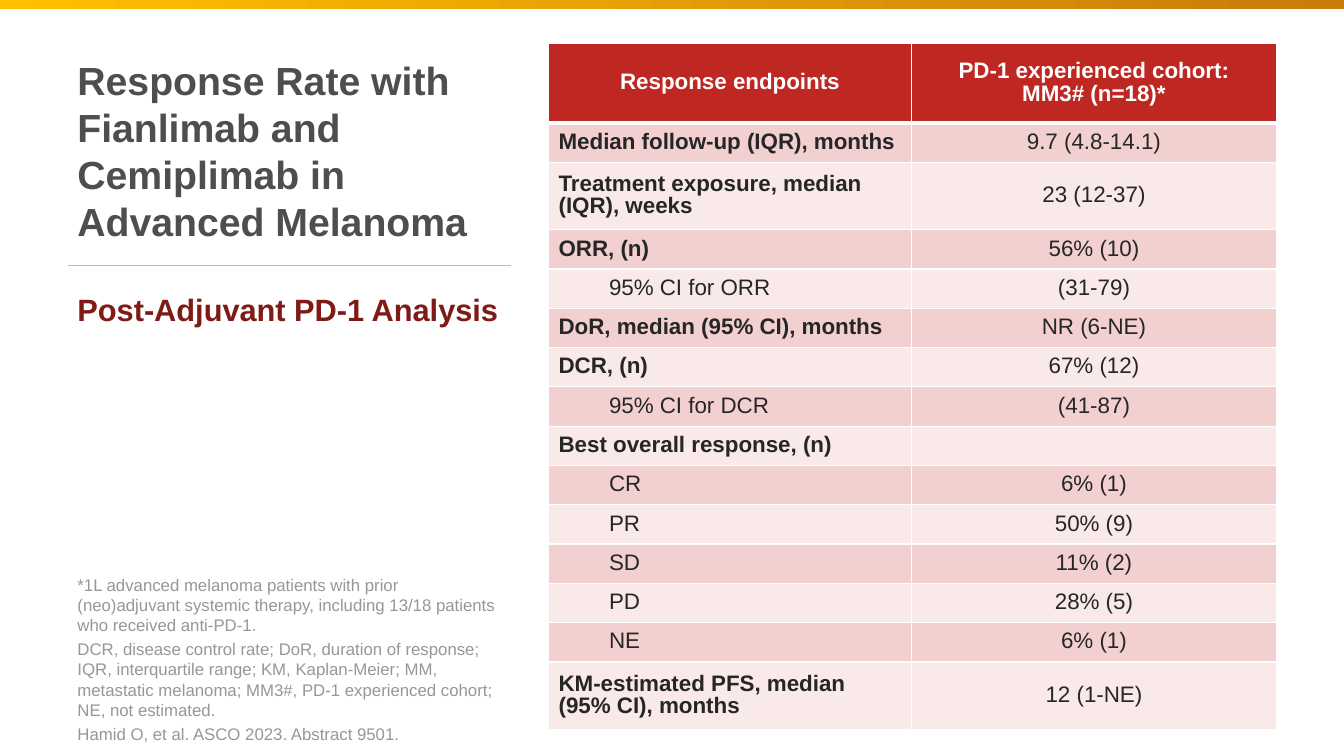
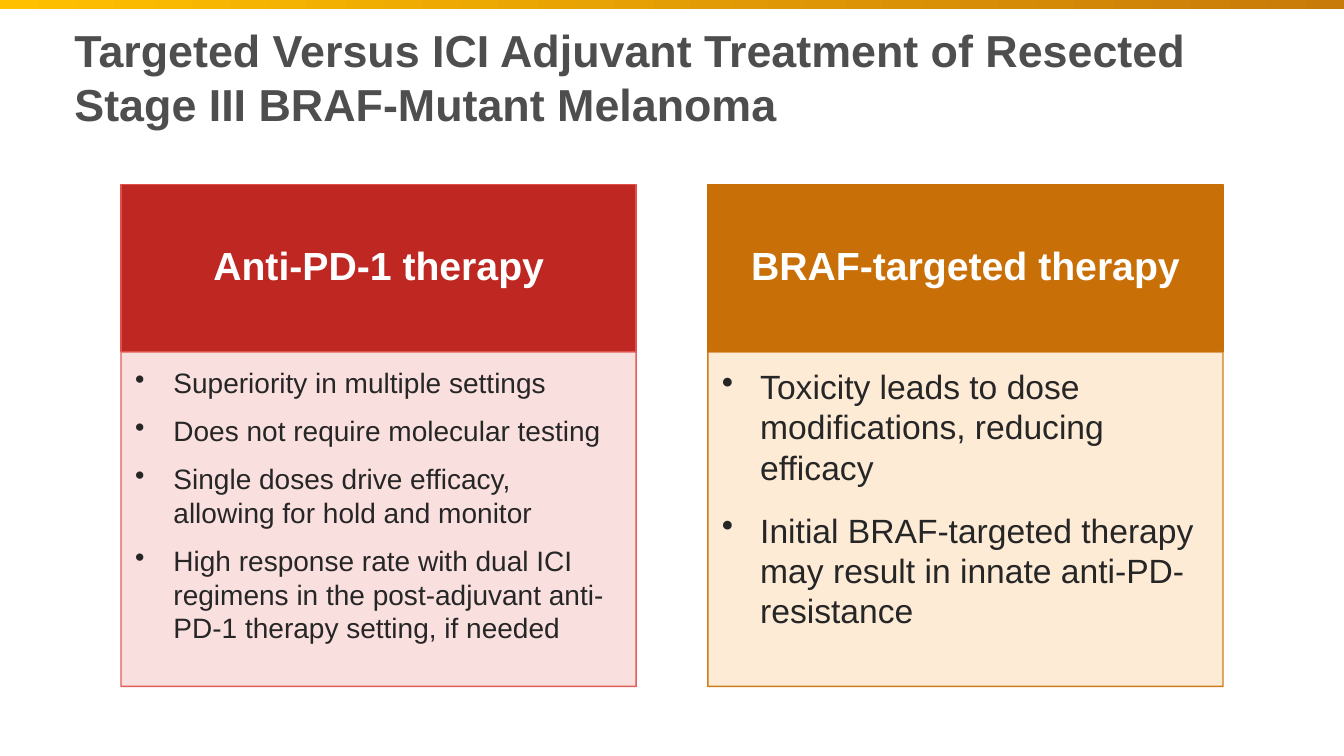
from dataclasses import dataclass

from lxml import etree
from pptx import Presentation
from pptx import util as u
from pptx.dml.color import RGBColor
from pptx.enum import shapes, text
from pptx.oxml import ns

FONT = "Arial"
WIDTH, HEIGHT = 13.33, 7.5
COLORS = {
    "white": "FFFFFF",
    "gold": "FFC000",
    "amber": "C97B09",
    "title": "4D4E4D",
    "subtitle": "7F1A16",
    "body": "262626",
    "note": "979797",
    "red": "BE2722",
    "red_line": "DF504B",
    "red_tint": "F9DCDB",
    "orange": "C96F07",
    "orange_tint": "FDE9D2",
    "band_dark": "F3D0D0",
    "band_light": "F9E9E9",
}


@dataclass(frozen=True)
class Style:
    size: float
    color: str
    bold: bool = False
    centered: bool = False
    before: float = 0
    after: float = 0
    line: float = 1
    indent: float = 0
    bullet: bool = False


@dataclass(frozen=True)
class Endpoint:
    label: str
    value: str
    nested: bool = False
    height: float = 0.39


@dataclass(frozen=True)
class Panel:
    heading: str
    points: tuple[str, ...]
    size: float
    gap: float
    fill: str
    line: str
    tint: str


ENDPOINTS = (
    Endpoint("Median follow-up (IQR), months", "9.7 (4.8-14.1)"),
    Endpoint("Treatment exposure, median \n(IQR), weeks", "23 (12-37)", height=0.67),
    Endpoint("ORR, (n)", "56% (10)"),
    Endpoint("95% CI for ORR", "(31-79)", nested=True),
    Endpoint("DoR, median (95% CI), months", "NR (6-NE)"),
    Endpoint("DCR, (n)", "67% (12)"),
    Endpoint("95% CI for DCR", "(41-87)", nested=True),
    Endpoint("Best overall response, (n)", ""),
    Endpoint("CR", "6% (1)", nested=True),
    Endpoint("PR", "50% (9)", nested=True),
    Endpoint("SD", "11% (2)", nested=True),
    Endpoint("PD", "28% (5)", nested=True),
    Endpoint("NE", "6% (1)", nested=True),
    Endpoint("KM-estimated PFS, median \n(95% CI), months", "12 (1-NE)", height=0.67),
)

NOTES = (
    "*1L advanced melanoma patients with prior (neo)adjuvant systemic therapy, "
    "including 13/18 patients who received anti-PD-1.",
    "DCR, disease control rate; DoR, duration of response; IQR, interquartile range; "
    "KM, Kaplan-Meier; MM, metastatic melanoma; MM3#, PD-1 experienced cohort; "
    "NE, not estimated.",
    "Hamid O, et al. ASCO 2023. Abstract 9501.",
)

PANELS = (
    Panel(
        "Anti-PD-1 therapy",
        (
            "Superiority in multiple settings",
            "Does not require molecular testing",
            "Single doses drive efficacy, allowing for hold and monitor",
            "High response rate with dual ICI regimens in the post-adjuvant "
            "anti-PD-1 therapy setting, if needed",
        ),
        20, 10.3, "red", "red_line", "red_tint",
    ),
    Panel(
        "BRAF-targeted therapy",
        (
            "Toxicity leads to dose modifications, reducing efficacy",
            "Initial BRAF-targeted therapy may result in innate anti-PD- resistance",
        ),
        24, 16.3, "orange", "orange", "orange_tint",
    ),
)


def rgb(name: str) -> RGBColor:
    return RGBColor.from_string(COLORS[name])


def sub(parent, tag: str, **attrs):
    return etree.SubElement(parent, ns.qn(tag), **attrs)


def write(tf, items: list[tuple[str, Style]]) -> None:
    tf.word_wrap = True
    for i, (content, style) in enumerate(items):
        p = tf.paragraphs[0] if i == 0 else tf.add_paragraph()
        p.text = content
        pPr = p._p.get_or_add_pPr()
        if style.indent:
            pPr.set("marL", str(u.Inches(style.indent)))
        if style.bullet:
            pPr.set("indent", str(-u.Inches(style.indent)))
            sub(pPr, "a:buChar", char="•")
        p.alignment = text.PP_ALIGN.CENTER if style.centered else text.PP_ALIGN.LEFT
        p.space_before, p.space_after = u.Pt(style.before), u.Pt(style.after)
        p.line_spacing = style.line
        f = p.font
        f.name, f.size, f.bold = FONT, u.Pt(style.size), style.bold
        f.color.rgb = rgb(style.color)


def add_text(s, left: float, top: float, width: float, height: float,
             anchor, items: list[tuple[str, Style]]) -> None:
    sp = s.shapes.add_textbox(*map(u.Inches, (left, top, width, height)))
    sp.text_frame.vertical_anchor = anchor
    write(sp.text_frame, items)


def add_rect(s, left: float, top: float, width: float, height: float):
    sp = s.shapes.add_shape(shapes.MSO_SHAPE.RECTANGLE,
                            *map(u.Inches, (left, top, width, height)))
    sp.shadow.inherit = False
    return sp


def add_slide(prs):
    s = prs.slides.add_slide(prs.slide_layouts[6])
    sp = add_rect(s, 0, 0, WIDTH, 0.09)
    sp.line.fill.background()
    sp.fill.gradient()
    sp.fill.gradient_angle = 0
    for stop, position, color in zip(sp.fill.gradient_stops, (0, 1), ("gold", "amber")):
        stop.position = position
        stop.color.rgb = rgb(color)
    return s


def add_rule(s, left: float, top: float, width: float) -> None:
    cx = s.shapes.add_connector(shapes.MSO_CONNECTOR.STRAIGHT,
                                *map(u.Inches, (left, top, left + width, top)))
    cx.line.color.rgb = rgb("gold")
    cx.line.width = u.Pt(0.5)
    sub(cx._element.spPr, "a:effectLst")


def fill_cell(cell, content: str, fill: str, style: Style, bottom: float = 1) -> None:
    tcPr = cell._tc.get_or_add_tcPr()
    for side, width in (("L", 1), ("R", 1), ("T", 1), ("B", bottom)):
        ln = sub(tcPr, f"a:ln{side}", w=str(u.Pt(width)))
        sub(sub(ln, "a:solidFill"), "a:srgbClr", val=COLORS["white"])
    cell.fill.solid()
    cell.fill.fore_color.rgb = rgb(fill)
    cell.vertical_anchor = text.MSO_ANCHOR.MIDDLE
    write(cell.text_frame, [(content, style)])


def add_endpoints(s) -> None:
    widths = (3.6, 3.62)
    heights = (0.79, *(e.height for e in ENDPOINTS))
    box = (5.44, 0.43, sum(widths), sum(heights))
    tbl = s.shapes.add_table(len(heights), len(widths), *map(u.Inches, box)).table
    tbl.horz_banding = False
    for column, width in zip(tbl.columns, widths):
        column.width = u.Inches(width)
    for row, height in zip(tbl.rows, heights):
        row.height = u.Inches(height)

    head = Style(16, "white", bold=True, centered=True, line=0.9)
    label = Style(16, "body", bold=True, line=0.9)
    nested = Style(16, "body", line=0.9, indent=0.5)
    value = Style(16, "body", centered=True, line=0.9)
    for c, content in enumerate(("Response endpoints",
                                 "PD-1 experienced cohort:\nMM3# (n=18)*")):
        fill_cell(tbl.cell(0, c), content, "red", head, bottom=3)
    for r, e in enumerate(ENDPOINTS, 1):
        fill = "band_dark" if r % 2 else "band_light"
        fill_cell(tbl.cell(r, 0), e.label, fill, nested if e.nested else label)
        fill_cell(tbl.cell(r, 1), e.value, fill, value)


def add_block(s, box: tuple[float, ...], fill: str, line: str,
              margins: tuple[float, ...], anchor, items: list[tuple[str, Style]]):
    sp = add_rect(s, *box)
    sp.fill.solid()
    sp.fill.fore_color.rgb = rgb(fill)
    sp.line.color.rgb = rgb(line)
    sp.line.width = u.Pt(1)
    tf = sp.text_frame
    tf.margin_left, tf.margin_top, tf.margin_right, tf.margin_bottom = map(u.Inches, margins)
    tf.vertical_anchor = anchor
    write(tf, items)
    return sp


def add_panel(s, left: float, panel: Panel) -> None:
    top, width, head, body = 1.83, 5.11, 1.66, 3.32
    add_block(s, (left, top, width, head), panel.fill, panel.line,
              (0.19, 0.11, 0.19, 0.11), text.MSO_ANCHOR.MIDDLE,
              [(panel.heading, Style(28, "white", bold=True, centered=True, line=0.9))])
    style = Style(panel.size, "body", after=panel.gap, indent=0.38, bullet=True)
    sp = add_block(s, (left, top + head, width, body), panel.tint, panel.line,
                   (0.14, 0.14, 0.19, 0.21), text.MSO_ANCHOR.TOP,
                   [(point, style) for point in panel.points])
    for color in sp._element.spPr.iter(ns.qn("a:srgbClr")):
        sub(color, "a:alpha", val="90000")


def response_slide(prs) -> None:
    s = add_slide(prs)
    left, width = 0.67, 4.4
    add_text(s, left, 0.22, width, 3.36, text.MSO_ANCHOR.MIDDLE, [
        ("Response Rate with Fianlimab and Cemiplimab in Advanced Melanoma",
         Style(28, "title", bold=True)),
        ("Post-Adjuvant PD-1 Analysis", Style(22, "subtitle", bold=True, before=33)),
    ])
    add_endpoints(s)
    note = Style(12, "note", after=3)
    add_text(s, left, 5.63, width, 1.8, text.MSO_ANCHOR.BOTTOM,
             [(content, note) for content in NOTES])
    add_rule(s, left, 2.63, width)


def therapy_slide(prs) -> None:
    s = add_slide(prs)
    add_text(s, 0.64, 0.11, 11.75, 1.3, text.MSO_ANCHOR.MIDDLE, [
        ("Targeted Versus ICI Adjuvant Treatment of Resected "
         "Stage III BRAF-Mutant Melanoma", Style(32, "title", bold=True)),
    ])
    for i, panel in enumerate(PANELS):
        add_panel(s, 1.2 + 5.82 * i, panel)


def main() -> None:
    prs = Presentation()
    prs.slide_width, prs.slide_height = u.Inches(WIDTH), u.Inches(HEIGHT)
    response_slide(prs)
    therapy_slide(prs)
    prs.save("out.pptx")


if __name__ == "__main__":
    main()
